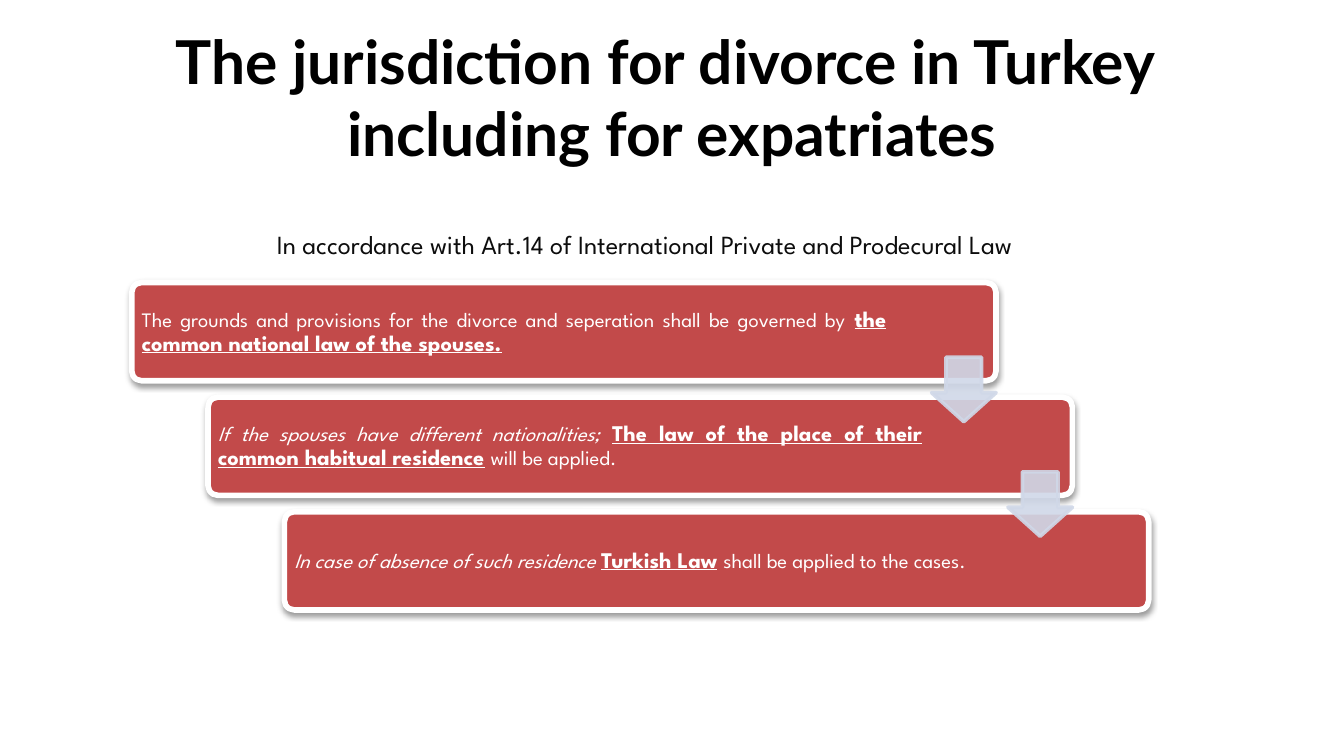
from dataclasses import dataclass

from lxml import etree
from pptx import Presentation
from pptx.dml.color import RGBColor
from pptx.enum.shapes import MSO_SHAPE as Shape
from pptx.enum.text import MSO_ANCHOR as Anchor, PP_ALIGN as Align
from pptx.oxml.ns import qn
from pptx.util import Pt


@dataclass(frozen=True)
class Theme:
    title_font: str = "Lato"
    body_font: str = "League Spartan"
    title: str = "000000"
    caption: str = "0D0D0D"
    card: str = "C24A4A"
    light: str = "FFFFFF"
    arrow: str = "D0D8E8"
    shadow: str = "000000"
    title_size: float = 32.4
    caption_size: float = 14
    key_size: float = 12
    text_size: float = 11


PLAIN, ITALIC, KEY, GAP = "plain", "italic", "key", "gap"


class SlideBuilder:
    def __init__(self, deck, theme):
        self.theme = theme
        self.page = deck.slides.add_slide(deck.slide_layouts[5])

    def span(self, para, text, font, size, color, bold=False, italic=False, underline=False):
        run = para.add_run()
        run.text = text
        run.font.name = font
        run.font.size = Pt(size)
        run.font.color.rgb = RGBColor.from_string(color)
        run.font.bold = bold
        run.font.italic = italic
        run.font.underline = underline

    def title(self, lines, left, top, width, height):
        box = self.page.shapes.title
        box.left, box.top, box.width, box.height = map(Pt, (left, top, width, height))
        box.text_frame.vertical_anchor = Anchor.MIDDLE
        para = box.text_frame.paragraphs[0]
        para.alignment = Align.CENTER
        for index, line in enumerate(lines):
            if index:
                para.add_line_break()
            self.span(para, line, self.theme.title_font, self.theme.title_size,
                      self.theme.title, bold=True)

    def text_box(self, left, top, width, height):
        box = self.page.shapes.add_textbox(Pt(left), Pt(top), Pt(width), Pt(height))
        box.text_frame.word_wrap = True
        return box.text_frame

    def caption(self, text, left, top, width, height):
        para = self.text_box(left, top, width, height).paragraphs[0]
        para.alignment = Align.CENTER
        self.span(para, text, self.theme.body_font, self.theme.caption_size, self.theme.caption)

    def shape(self, kind, left, top, width, height, adjustments, fill, line, line_width):
        shape = self.page.shapes.add_shape(kind, Pt(left), Pt(top), Pt(width), Pt(height))
        shape.shadow.inherit = False
        for index, value in enumerate(adjustments):
            shape.adjustments[index] = value
        shape.fill.solid()
        shape.fill.fore_color.rgb = RGBColor.from_string(fill)
        shape.line.color.rgb = RGBColor.from_string(line)
        shape.line.width = Pt(line_width)
        return shape

    def set_alpha(self, color, percent):
        etree.SubElement(color, qn("a:alpha"), val=str(percent * 1000))

    def card(self, left, top, width, height):
        card = self.shape(Shape.ROUNDED_RECTANGLE, left, top, width, height, [0.1],
                          self.theme.card, self.theme.light, 3)
        effects = card.element.spPr.find(qn("a:effectLst"))
        shadow = etree.SubElement(effects, qn("a:outerShdw"), blurRad=str(Pt(3.1)),
                                  dist=str(Pt(1.6)), dir="5400000", rotWithShape="0")
        color = etree.SubElement(shadow, qn("a:srgbClr"), val=self.theme.shadow)
        self.set_alpha(color, 38)

    def card_text(self, spans, left, top, width, height):
        frame = self.text_box(left, top, width, height)
        frame.vertical_anchor = Anchor.MIDDLE
        frame.margin_left = frame.margin_right = Pt(3.6)
        frame.margin_top = frame.margin_bottom = Pt(3.6)
        para = frame.paragraphs[0]
        para.alignment = Align.JUSTIFY
        para.line_spacing = 0.9
        for text, style in spans:
            bold = style in (KEY, GAP)
            size = self.theme.key_size if bold else self.theme.text_size
            self.span(para, text, self.theme.body_font, size, self.theme.light,
                      bold=bold, italic=style == ITALIC, underline=style == KEY)

    def down_arrow(self, left, top, size):
        arrow = self.shape(Shape.DOWN_ARROW, left, top, size, size, [0.55, 0.45],
                           self.theme.arrow, self.theme.arrow, 2)
        for color in arrow.element.spPr.iter(qn("a:srgbClr")):
            self.set_alpha(color, 90)


RULES = [
    (406, [("The grounds and provisions for the divorce and seperation shall be governed by ", PLAIN),
           ("the common national law of the spouses.", KEY)]),
    (384.5, [("If the spouses have different nationalities; ", ITALIC),
             ("The law of the place of their common habitual residence", KEY),
             (" ", GAP), ("will be applied.", PLAIN)]),
    (384.5, [("In case of absence of such residence ", ITALIC), ("Turkish Law", KEY),
             (" ", GAP), ("shall be applied to the cases.", PLAIN)]),
]
LEFT, TOP, WIDTH, HEIGHT = 70.6, 151.4, 463, 52.6
STEP_X, STEP_Y = 40.9, 61.4
ARROW = 34.5


def main():
    deck = Presentation()
    deck.slide_width, deck.slide_height = Pt(720), Pt(405)
    slide = SlideBuilder(deck, Theme())
    slide.title(["The jurisdiction for divorce in Turkey ", "including for expatriates"],
                54, 2.2, 612, 98.6)
    corners = [(LEFT + i * STEP_X, TOP + i * STEP_Y) for i in range(len(RULES))]
    for (left, top), (text_width, spans) in zip(corners, RULES):
        slide.card(left, top, WIDTH, HEIGHT)
        slide.card_text(spans, left + 1.7, top + 1.7, text_width, HEIGHT - 3.2)
    for left, top in corners[:-1]:
        slide.down_arrow(left + WIDTH - ARROW, top + 40, ARROW)
    slide.caption("In accordance with Art.14 of International Private and Prodecural Law",
                  70.6, 118.8, 550, 24.5)
    deck.save("out.pptx")


if __name__ == "__main__":
    main()
